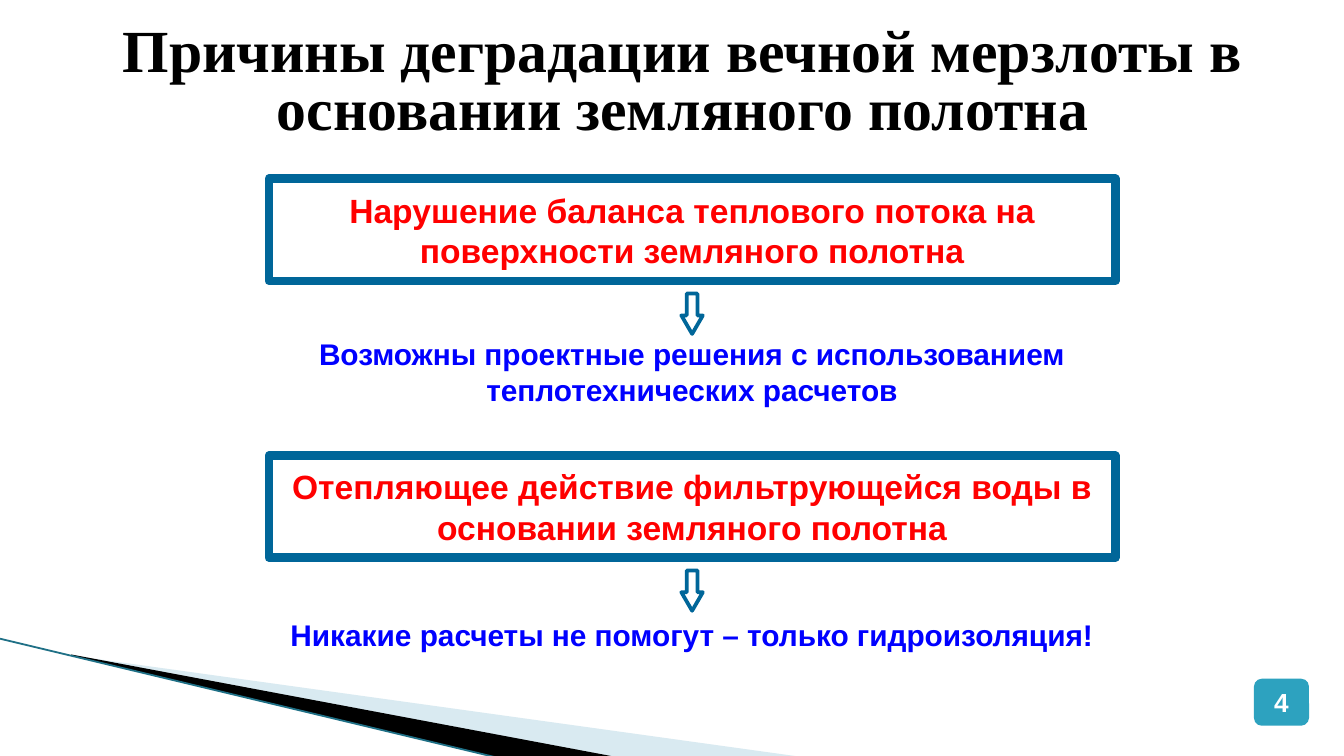
from dataclasses import dataclass

from lxml.etree import SubElement
from pptx import Presentation
from pptx.dml.color import RGBColor
from pptx.enum.shapes import MSO_CONNECTOR, MSO_SHAPE
from pptx.enum.text import MSO_ANCHOR, PP_ALIGN
from pptx.oxml.ns import qn
from pptx.util import Emu, Pt

PX = 4572  # EMU per px: 200 px to the inch


@dataclass(frozen=True)
class Theme:
    title_font: str = "Times New Roman"
    body_font: str = "Arial"
    title_size: int = 32
    cause_size: int = 18
    remedy_size: int = 16
    number_size: int = 14
    black: str = "000000"
    white: str = "FFFFFF"
    red: str = "FF0000"
    blue: str = "0000FF"
    frame: str = "006699"
    badge: str = "2DA2BF"
    pale: str = "A0CBDC"
    edge: str = "1F7086"


@dataclass(frozen=True)
class Box:
    left: int
    top: int
    width: int
    height: int

    def emu(self) -> list[Emu]:
        return [px(n) for n in (self.left, self.top, self.width, self.height)]


@dataclass(frozen=True)
class Cause:
    top: int
    text: str
    remedy: str
    remedy_top: int
    remedy_height: int


THEME = Theme()
COLUMN_LEFT, COLUMN_WIDTH = 400, 1260
CAUSE_HEIGHT = 152
ARROW_WIDTH, ARROW_HEIGHT, ARROW_GAP = 32, 60, 19

CAUSES = [
    Cause(266, "Нарушение баланса теплового потока на поверхности земляного полотна",
          "Возможны проектные решения с использованием теплотехнических расчетов", 490, 128),
    Cause(678, "Отепляющее действие фильтрующейся воды в основании земляного полотна",
          "Никакие расчеты не помогут – только гидроизоляция!", 908, 74),
]


def px(count: int) -> Emu:
    return Emu(count * PX)


def rgb(color: str) -> RGBColor:
    return RGBColor.from_string(color)


def write(shape, text: str, size: int, color: str, font: str = THEME.body_font,
          inset: tuple[int, int] = (20, 10), anchor=MSO_ANCHOR.TOP):
    """Put one bold centred run in the shape and return its paragraph."""
    frame = shape.text_frame
    frame.word_wrap = True
    frame.vertical_anchor = anchor
    frame.margin_left = frame.margin_right = px(inset[0])
    frame.margin_top = frame.margin_bottom = px(inset[1])
    para = frame.paragraphs[0]
    para.alignment = PP_ALIGN.CENTER
    span = para.add_run()
    span.text = text
    span.font.name = font
    span.font.size = Pt(size)
    span.font.bold = True
    span.font.color.rgb = rgb(color)
    return para


def paint(shape, fill: str, line: str | None = None, weight: float = 0) -> None:
    shape.shadow.inherit = False
    shape.fill.solid()
    shape.fill.fore_color.rgb = rgb(fill)
    if line is None:
        shape.line.fill.background()
    else:
        shape.line.color.rgb = rgb(line)
        shape.line.width = Pt(weight)


def add_shape(page, kind, box: Box, fill: str, line: str | None = None, weight: float = 0):
    shape = page.shapes.add_shape(kind, *box.emu())
    paint(shape, fill, line, weight)
    return shape


def add_wedge(page, points: list[tuple[int, int]], fill: str, opacity: int = 100) -> None:
    builder = page.shapes.build_freeform(*points[0], scale=PX)
    builder.add_line_segments(points[1:], close=True)
    wedge = builder.convert_to_shape()
    paint(wedge, fill)
    if opacity < 100:
        color = wedge.fill._xPr.find(qn("a:solidFill"))[0]
        SubElement(color, qn("a:alpha")).set("val", str(opacity * 1000))


def add_corner(page) -> None:
    add_wedge(page, [(110, 976), (1190, 1126), (912, 1126)], THEME.pale, opacity=40)
    add_wedge(page, [(106, 974), (914, 1126), (744, 1128), (108, 976)], THEME.black)
    edge = page.shapes.add_connector(
        MSO_CONNECTOR.STRAIGHT, px(-2), px(950), px(742), px(1128))
    edge.line.color.rgb = rgb(THEME.edge)
    edge.line.width = Pt(0.95)
    SubElement(edge._element.spPr, qn("a:effectLst"))


def add_title(page, text: str) -> None:
    title = page.shapes.title
    title.left, title.top, title.width, title.height = Box(118, 30, 1796, 192).emu()
    para = write(title, text, THEME.title_size, THEME.black, THEME.title_font)
    para.line_spacing = 0.8


def add_cause(page, cause: Cause) -> None:
    frame = add_shape(page, MSO_SHAPE.RECTANGLE,
                      Box(COLUMN_LEFT, cause.top, COLUMN_WIDTH, CAUSE_HEIGHT),
                      THEME.white, THEME.frame, 4.5)
    write(frame, cause.text, THEME.cause_size, THEME.red, inset=(16, 16))

    arrow_left = COLUMN_LEFT + (COLUMN_WIDTH - ARROW_WIDTH) // 2
    arrow_top = cause.top + CAUSE_HEIGHT + ARROW_GAP
    arrow = add_shape(page, MSO_SHAPE.DOWN_ARROW,
                      Box(arrow_left, arrow_top, ARROW_WIDTH, ARROW_HEIGHT),
                      THEME.white, THEME.frame, 2)
    arrow.adjustments[0], arrow.adjustments[1] = 0.5, 0.86

    remedy = page.shapes.add_textbox(
        *Box(COLUMN_LEFT, cause.remedy_top, COLUMN_WIDTH, cause.remedy_height).emu())
    write(remedy, cause.remedy, THEME.remedy_size, THEME.blue)


def main() -> None:
    deck = Presentation()
    deck.slide_width, deck.slide_height = px(2000), px(1125)
    page = deck.slides.add_slide(deck.slide_layouts[5])

    # Corner decoration and heading
    add_corner(page)
    add_title(page, "Причины деградации вечной мерзлоты в основании земляного полотна")

    # Causes with their remedies
    for cause in CAUSES:
        add_cause(page, cause)

    # Page number
    badge = add_shape(page, MSO_SHAPE.ROUNDED_RECTANGLE, Box(1866, 1010, 82, 70), THEME.badge)
    write(badge, "4", THEME.number_size, THEME.white, inset=(8, 8), anchor=MSO_ANCHOR.MIDDLE)

    deck.save("out.pptx")


if __name__ == "__main__":
    main()
